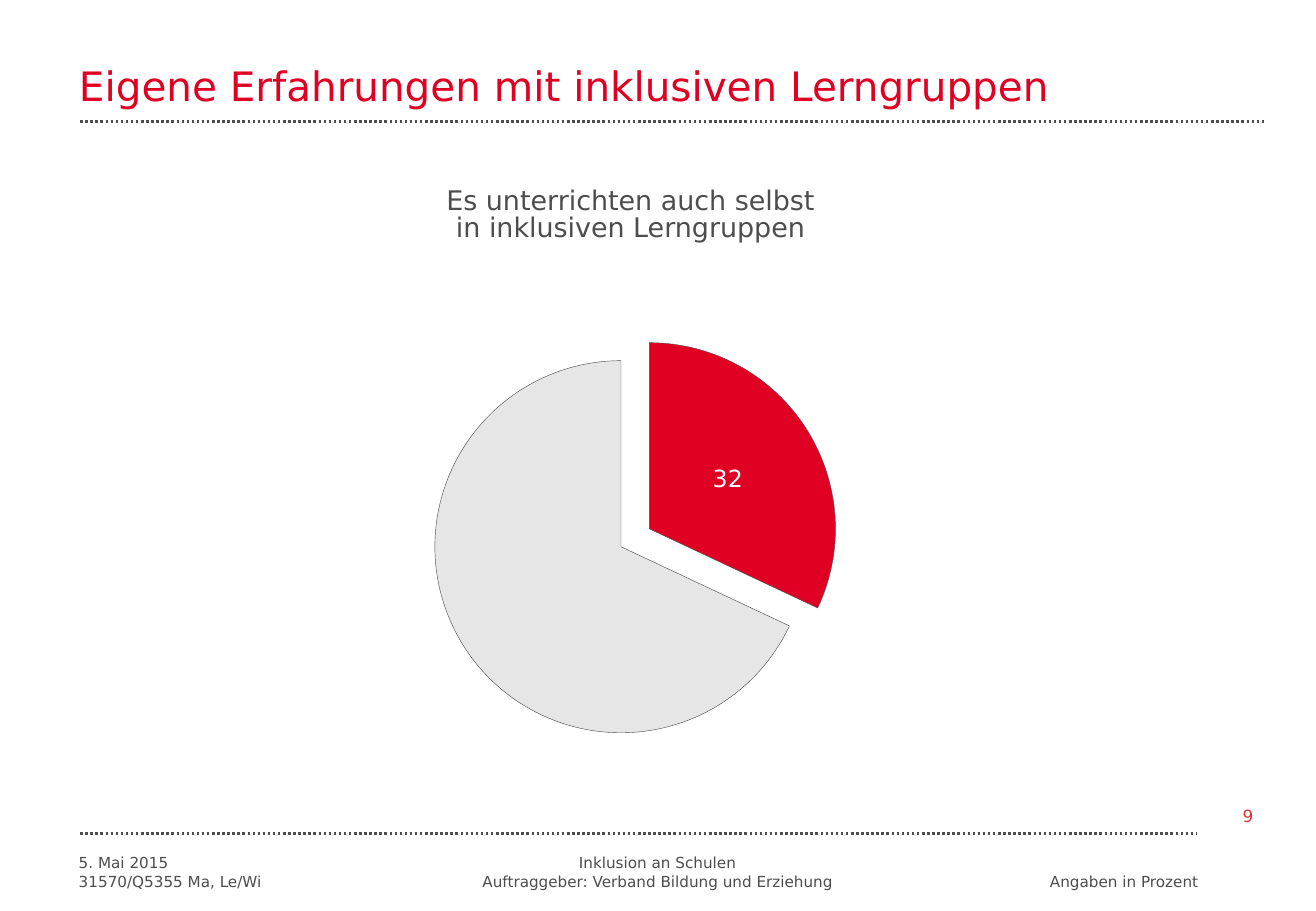
"""Build the slide on teachers' own experience with inclusive groups."""
import pptx
import pptx.chart.data
import pptx.dml.color
import pptx.enum.chart
import pptx.enum.dml
import pptx.enum.shapes
import pptx.enum.text
import pptx.oxml
import pptx.oxml.ns
import pptx.util
from dataclasses import dataclass

Inches, Pt = pptx.util.Inches, pptx.util.Pt
RGB = pptx.dml.color.RGBColor.from_string
ALIGN = pptx.enum.text.PP_ALIGN
ANCHOR = pptx.enum.text.MSO_ANCHOR


@dataclass(frozen=True)
class Theme:
    font: str = "DejaVu Sans"
    red: str = "DF0024"
    page: str = "E73137"
    dark: str = "4D4D4D"
    pale: str = "E6E6E6"
    white: str = "FFFFFF"
    head: int = 24
    lead: int = 16
    value: int = 14
    number: int = 10
    small: int = 9


THEME = Theme()
SIZE = (10.83, 7.5)
TITLE = ("Eigene Erfahrungen mit inklusiven Lerngruppen",)
TITLE_BOX = (0.55, 0.45, 8.29, 0.5)
RULES = [(0.66, 10.41, 1), (0.66, 9.85, 6.86)]
LEAD = ("Es unterrichten auch selbst", "in inklusiven Lerngruppen")
LEAD_BOX = (3.54, 1.5, 3.3, 0.56)
NOTES = [
    (("Inklusion an Schulen", "Auftraggeber: Verband Bildung und Erziehung"),
     (3.84, 6.98, 3.14, 0.4), ALIGN.CENTER),
    (("5. Mai 2015", "31570/Q5355 Ma, Le/Wi"),
     (0.55, 6.98, 1.76, 0.4), ALIGN.LEFT),
    (("Angaben in Prozent",), (8.53, 7.13, 1.44, 0.25), ALIGN.CENTER),
]
PAGE = ("9",)
PAGE_BOX = (10.05, 6.52, 0.44, 0.39)
PIE_BOX = (2.96, 2.58, 4.25, 3.96)
PLOT = {"x": 0.164, "y": 0.081, "w": 0.721, "h": 0.784}
VALUES = (32, 68) + (None,) * 5
SLICES = [(THEME.red, 12), (THEME.pale, 6)]


def style(font, size, color):
    font.name = THEME.font
    font.size = Pt(size)
    font.color.rgb = RGB(color)


def write(shape, lines, size, color, align, space=1.0):
    frame = shape.text_frame
    frame.word_wrap = False
    frame.auto_size = pptx.enum.text.MSO_AUTO_SIZE.NONE
    for i, line in enumerate(lines):
        para = frame.add_paragraph() if i else frame.paragraphs[0]
        para.alignment = align
        para.line_spacing = space
        run = para.add_run()
        run.text = line
        style(run.font, size, color)
    return frame


def add_text(slide, box, *args):
    shape = slide.shapes.add_textbox(*map(Inches, box))
    return write(shape, *args)


def add_title(slide):
    title = slide.shapes.title
    title.left, title.top, title.width, title.height = map(Inches, TITLE_BOX)
    frame = write(title, TITLE, THEME.head, THEME.red, ALIGN.LEFT)
    frame.vertical_anchor = ANCHOR.BOTTOM


def add_rule(slide, left, right, top):
    rule = slide.shapes.add_connector(
        pptx.enum.shapes.MSO_CONNECTOR.STRAIGHT,
        *map(Inches, (left, top, right, top)))
    rule.line.color.rgb = RGB(THEME.dark)
    rule.line.width = Pt(1.5)
    rule.line.dash_style = pptx.enum.dml.MSO_LINE.ROUND_DOT
    effects = pptx.oxml.ns.qn("a:effectLst")
    rule._element.spPr.append(rule._element.makeelement(effects))


def place_plot(chart):
    parts = "".join(f'<c:{k}Mode val="edge"/>' for k in "xy")
    parts += "".join(f'<c:{k} val="{v}"/>' for k, v in PLOT.items())
    layout = pptx.oxml.parse_xml(
        f'<c:layout {pptx.oxml.ns.nsdecls("c")}><c:manualLayout>'
        f'<c:layoutTarget val="inner"/>{parts}</c:manualLayout></c:layout>')
    area = chart._chartSpace.chart.plotArea
    for old in area.findall(pptx.oxml.ns.qn("c:layout")):
        area.remove(old)
    area.insert(0, layout)


def burst(point, amount):
    node = point.format._element if hasattr(point.format, "_element") else None
    return node, amount


def add_pie(slide):
    data = pptx.chart.data.CategoryChartData()
    data.categories = [str(i + 1) for i in range(len(VALUES))]
    data.add_series("Series 1", VALUES)
    chart = slide.shapes.add_chart(
        pptx.enum.chart.XL_CHART_TYPE.PIE, *map(Inches, PIE_BOX), data).chart
    chart.has_legend = chart.has_title = False
    style(chart.font, THEME.value, THEME.dark)
    chart.plots[0].vary_by_categories = True
    place_plot(chart)
    series = chart.plots[0].series[0]
    for i, (color, shift) in enumerate(SLICES):
        look = series.points[i].format
        look.fill.solid()
        look.fill.fore_color.rgb = RGB(color)
        look.line.color.rgb = RGB(THEME.dark)
        look.line.width = Pt(0.25)
        point = series._element.findall(pptx.oxml.ns.qn("c:dPt"))[i]
        point.find(pptx.oxml.ns.qn("c:spPr")).addprevious(
            pptx.oxml.parse_xml(
                f'<c:explosion {pptx.oxml.ns.nsdecls("c")} val="{shift}"/>'))
    label = series.points[0].data_label
    style(label.font, THEME.value, THEME.white)
    label.position = pptx.enum.chart.XL_LABEL_POSITION.CENTER


def main():
    deck = pptx.Presentation()
    deck.slide_width, deck.slide_height = map(Inches, SIZE)
    slide = deck.slides.add_slide(deck.slide_layouts[5])
    for rule in RULES:
        add_rule(slide, *rule)
    for lines, box, align in NOTES:
        add_text(slide, box, lines, THEME.small, THEME.dark, align)
    page = add_text(slide, PAGE_BOX, PAGE, THEME.number, THEME.page,
                    ALIGN.CENTER)
    page.margin_left = page.margin_right = 0
    page.margin_top = page.margin_bottom = 0
    page.vertical_anchor = ANCHOR.MIDDLE
    add_title(slide)
    add_pie(slide)
    add_text(slide, LEAD_BOX, LEAD, THEME.lead, THEME.dark, ALIGN.CENTER,
             0.85)
    deck.save("out.pptx")


if __name__ == "__main__":
    main()
